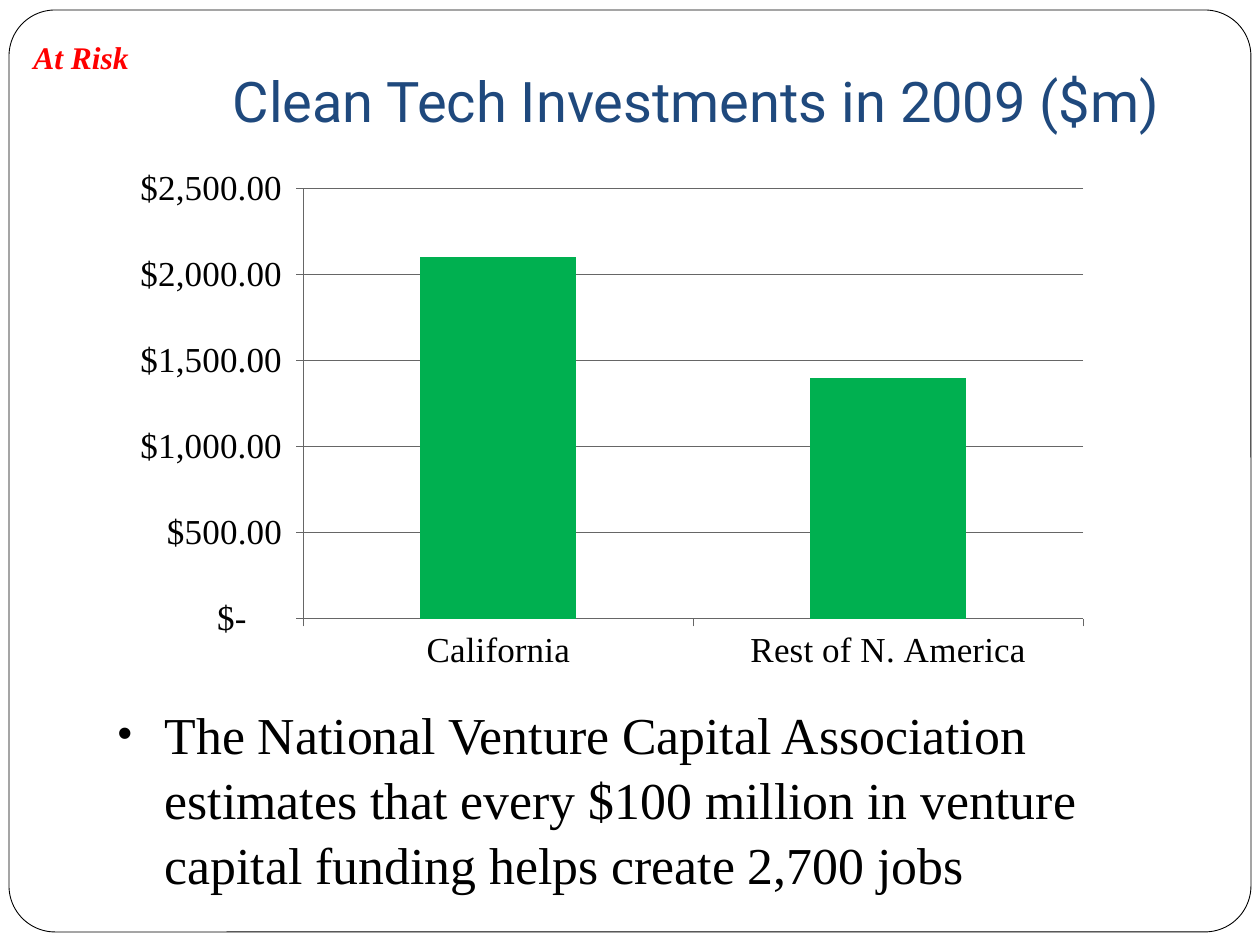
from lxml.etree import SubElement
from pptx import Presentation
from pptx.chart.data import CategoryChartData as Data
from pptx.dml.color import RGBColor as RGB
from pptx.enum.chart import XL_CHART_TYPE as Kind, XL_TICK_MARK as Tick
from pptx.enum.shapes import MSO_SHAPE as Shape
from pptx.enum.text import MSO_ANCHOR as Anchor, MSO_AUTO_SIZE as Fit, PP_ALIGN as Align
from pptx.oxml import parse_xml
from pptx.oxml.ns import nsdecls, qn
from pptx.util import Emu, Pt

SCALE = 914400 / 126
SERIF = "Times New Roman"
HUES = {"paper": "FFFFFF", "ink": "000000", "title": "1F497D",
        "risk": "FF0000", "bar": "00B050", "grid": "666666"}
MONEY = '_("$"* #,##0.00_);_("$"* \\(#,##0.00\\);_("$"* "-"??_);_(@_)'


def px(n):
    """Turn px into EMU."""
    return Emu(round(n * SCALE))


def hue(name):
    """Return a named colour."""
    return RGB.from_string(HUES[name])


def place(shape, box):
    """Move a shape to a box."""
    shape.left, shape.top, shape.width, shape.height = map(px, box)


def write(shape, text, font, size, color):
    """Set one paragraph of text and format its run."""
    frame = shape.text_frame
    frame.text = text
    frame.word_wrap = True
    frame.auto_size = Fit.NONE
    para = frame.paragraphs[0]
    para.alignment = Align.LEFT
    face = para.runs[0].font
    face.name, face.size = font, Pt(size)
    face.color.rgb = hue(color)
    return para


def add_frame(slide, box):
    """Draw the rounded border behind everything."""
    shape = slide.shapes.add_shape(Shape.ROUNDED_RECTANGLE, *map(px, box))
    shape.adjustments[0] = 0.05
    shape.shadow.inherit = False
    shape.fill.solid()
    shape.fill.fore_color.rgb = hue("paper")
    shape.line.color.rgb = hue("ink")
    shape.line.width = Pt(0.5)
    slide.shapes.element.insert(2, shape.element)


def add_title(slide, box):
    """Fill the title placeholder."""
    shape = slide.shapes.title
    place(shape, box)
    write(shape, "Clean Tech Investments in 2009 ($m)", "Roboto", 32, "title")
    shape.text_frame.vertical_anchor = Anchor.BOTTOM
    shape.text_frame.margin_bottom = px(13)


def add_body(slide, box):
    """Fill the body placeholder with one bullet."""
    shape = slide.placeholders[1]
    place(shape, box)
    para = write(shape, "The National Venture Capital Association estimates that every "
                 "$100 million in venture capital funding helps create 2,700 jobs",
                 SERIF, 29.6, "ink")
    para.line_spacing = 1.05
    props = para._p.get_or_add_pPr()
    props.set("marL", str(px(47)))
    props.set("indent", str(-px(47)))
    SubElement(props, qn("a:buSzPct")).set("val", "80000")
    SubElement(props, qn("a:buChar")).set("char", "•")


def add_tag(slide, box):
    """Add the risk label in the corner."""
    shape = slide.shapes.add_textbox(*map(px, box))
    face = write(shape, "At Risk", SERIF, 18, "risk").runs[0].font
    face.bold = face.italic = True


def set_plot(chart, **part):
    """Fix the inner plot area by fractions of the chart."""
    area = chart._chartSpace.chart.plotArea
    for old in area.findall(qn("c:layout")):
        area.remove(old)
    vals = "".join(f'<c:{key} val="{val}"/>' for key, val in part.items())
    area.insert(0, parse_xml(
        f'<c:layout {nsdecls("c")}><c:manualLayout><c:layoutTarget val="inner"/>'
        f'<c:xMode val="edge"/><c:yMode val="edge"/>{vals}</c:manualLayout></c:layout>'))


def add_bars(slide, box):
    """Add the column chart of investments."""
    data = Data(number_format=MONEY)
    data.categories = ["California", "Rest of N. America"]
    data.add_series("Series 1", [2100, 1400])
    chart = slide.shapes.add_chart(Kind.COLUMN_CLUSTERED, *map(px, box), data).chart
    chart.has_legend = chart.has_title = False
    chart.font.name, chart.font.size = SERIF, Pt(20)
    chart.font.color.rgb = hue("ink")
    plot = chart.plots[0]
    plot.gap_width, plot.vary_by_categories = 150, False
    fill = plot.series[0].format.fill
    fill.solid()
    fill.fore_color.rgb = hue("bar")
    cat, val = chart.category_axis, chart.value_axis
    val.minimum_scale, val.maximum_scale, val.major_unit = 0, 2500, 500
    val.has_major_gridlines = True
    val.tick_labels.number_format = MONEY
    val.tick_labels.number_format_is_linked = False
    for axis in (cat, val):
        axis.major_tick_mark = Tick.OUTSIDE
    for part in (cat, val, val.major_gridlines):
        part.format.line.color.rgb = hue("grid")
        part.format.line.width = Pt(0.75)
    set_plot(chart, x=0.19, y=0.06, w=0.79, h=0.82)


def main():
    """Build and save the slide."""
    deck = Presentation()
    deck.slide_width, deck.slide_height = px(1260), px(945)
    slide = deck.slides.add_slide(deck.slide_layouts[1])
    add_frame(slide, (9, 10, 1242, 922))
    add_title(slide, (220, 42, 967, 105))
    add_body(slide, (105, 693, 1029, 189))
    add_bars(slide, (116, 157, 987, 525))
    add_tag(slide, (21, 32, 242, 50))
    deck.save("out.pptx")


if __name__ == "__main__":
    main()
